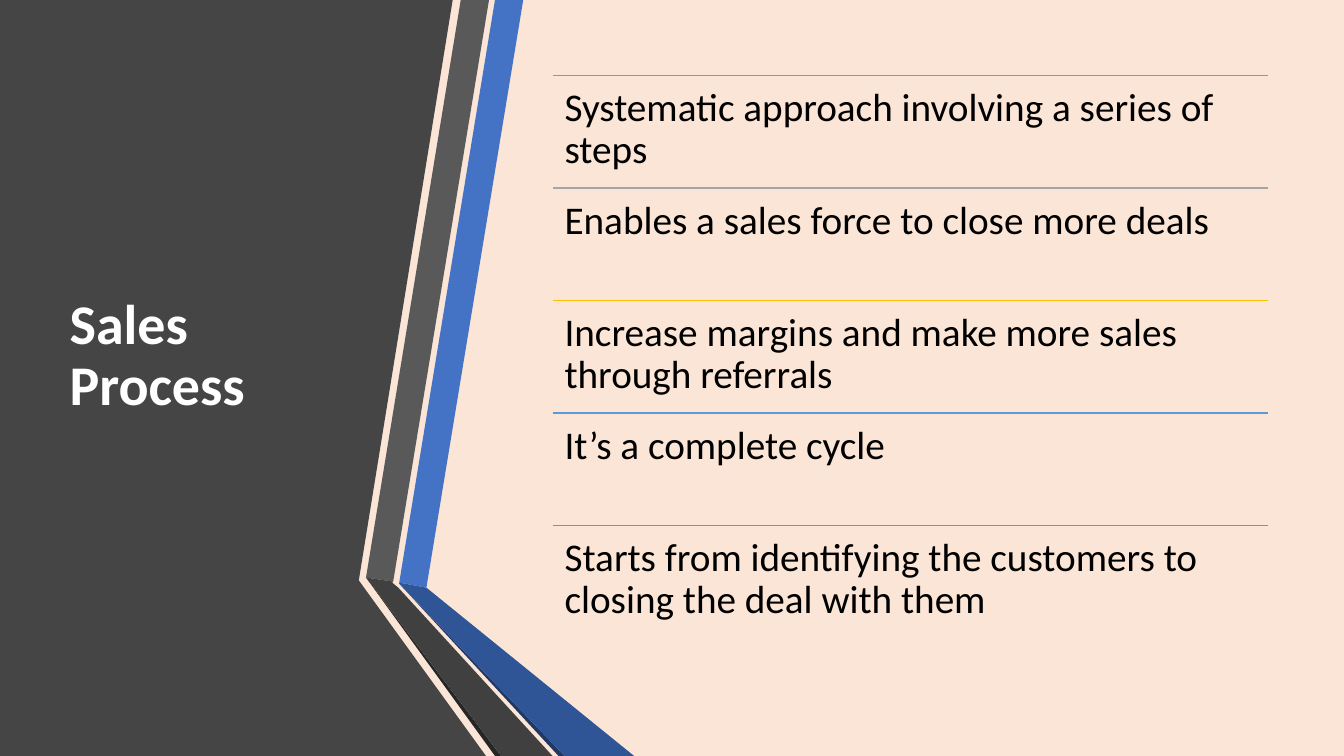
import pptx
import pptx.util
import pptx.dml.color
import pptx.enum.shapes
import pptx.enum.text
import pptx.oxml
import pptx.oxml.ns

# Content
TITLE = "Sales Process"
STEPS = [
    ("Systematic approach involving a series of steps", "orange"),
    ("Enables a sales force to close more deals", "grey"),
    ("Increase margins and make more sales through referrals", "gold"),
    ("It’s a complete cycle", "sky"),
    ("Starts from identifying the customers to closing the deal with them", "green"),
]
COLOURS = {
    "background": "FBE5D6", "panel": "454545", "title": "FFFFFF", "text": "000000",
    "blue": "4472C4", "blue fold": "2F5597", "blue edge": "203864",
    "dark": "595959", "dark fold": "404040", "dark edge": "262626",
    "orange": "ED7D31", "grey": "A5A5A5", "gold": "FFC000", "sky": "5B9BD5", "green": "70AD47",
}

# Layout in inches
WIDTH, HEIGHT = 13.33, 7.5
MARGIN = HEIGHT / 10
ROWS_LEFT, ROWS_WIDTH = 5.48, 7.1
ROW_HEIGHT = (6.33 - MARGIN) / len(STEPS)
ROW_INSET = 0.12
TITLE_BOX = (0.59, MARGIN, 3.04, 5.58)
PANEL = [(0, 0), (4.49, 0), (3.56, 5.75), (3.56, 5.76), (4.82, HEIGHT), (0, HEIGHT)]
RIBBONS = [
    ("blue", [(3.96, 5.78), (4.23, 5.83), (5.19, 0), (4.91, 0)]),
    ("dark", [(4.85, 0), (4.57, 0), (3.63, 5.73), (3.9, 5.77)]),
    ("dark edge", [(3.63, 5.73), (4.91, HEIGHT), (4.97, HEIGHT)]),
    ("blue edge", [(3.96, 5.79), (5.54, HEIGHT), (5.6, HEIGHT)]),
    ("blue fold", [(3.96, 5.79), (5.6, HEIGHT), (6.29, HEIGHT), (4.23, 5.83), (3.96, 5.78)]),
    ("dark fold", [(5.48, HEIGHT), (3.95, 5.83), (3.89, 5.78), (3.9, 5.77),
                   (3.63, 5.73), (4.97, HEIGHT)]),
]
TITLE_FONT = {"name": "Calibri", "size": pptx.util.Pt(40), "bold": True}
STEP_FONT = {"name": "Calibri", "size": pptx.util.Pt(28)}


def inches(*lengths):
    return [pptx.util.Inches(length) for length in lengths]


def colour(name):
    return pptx.dml.color.RGBColor.from_string(COLOURS[name])


def set_all(target, values):
    for name, value in values.items():
        setattr(target, name, value)


def add_outline(shapes, fill, points):
    corners = [inches(*point) for point in points]
    builder = shapes.build_freeform(*corners[0], scale=1.0)
    builder.add_line_segments(corners[1:], close=True)
    outline = builder.convert_to_shape()
    outline.shadow.inherit = False
    outline.fill.solid()
    outline.fill.fore_color.rgb = colour(fill)
    outline.line.fill.background()


def write(frame, text, font, ink, anchor, space_after=None):
    set_all(frame, {"text": text, "word_wrap": True, "vertical_anchor": anchor,
                    "auto_size": pptx.enum.text.MSO_AUTO_SIZE.NONE})
    paragraph = frame.paragraphs[0]
    set_all(paragraph, {"alignment": pptx.enum.text.PP_ALIGN.LEFT,
                        "line_spacing": 0.9, "space_after": space_after})
    set_all(paragraph.runs[0].font, font)
    paragraph.runs[0].font.color.rgb = colour(ink)


def add_rule(shapes, top, ink):
    rule = shapes.add_connector(
        pptx.enum.shapes.MSO_CONNECTOR.STRAIGHT,
        *inches(ROWS_LEFT, top, ROWS_LEFT + ROWS_WIDTH, top))
    rule.line.color.rgb = colour(ink)
    rule.line.width = pptx.util.Pt(1)
    properties = rule._element.spPr
    properties.append(pptx.oxml.parse_xml(
        "<a:effectLst %s/>" % pptx.oxml.ns.nsdecls("a")))


def main():
    deck = pptx.Presentation()
    deck.slide_width, deck.slide_height = inches(WIDTH, HEIGHT)
    slide = deck.slides.add_slide(deck.slide_layouts[5])
    slide.background.fill.solid()
    slide.background.fill.fore_color.rgb = colour("background")

    # Dark panel and folded ribbons
    add_outline(slide.shapes, "panel", PANEL)
    ribbons = slide.shapes.add_group_shape()
    for fill, points in RIBBONS:
        add_outline(ribbons.shapes, fill, points)

    # Title, brought in front of the panel
    title = slide.shapes.title
    set_all(title, dict(zip(("left", "top", "width", "height"), inches(*TITLE_BOX))))
    write(title.text_frame, TITLE, TITLE_FONT, "title", pptx.enum.text.MSO_ANCHOR.MIDDLE)
    slide.shapes._spTree.append(title._element)

    # Ruled rows of steps
    rows = slide.shapes.add_group_shape()
    insets = {"margin_" + side: pptx.util.Inches(ROW_INSET)
              for side in ("left", "top", "right", "bottom")}
    for index, (step, ink) in enumerate(STEPS):
        top = MARGIN + index * ROW_HEIGHT
        add_rule(rows.shapes, top, ink)
        row = rows.shapes.add_textbox(*inches(ROWS_LEFT, top, ROWS_WIDTH, ROW_HEIGHT))
        set_all(row.text_frame, insets)
        write(row.text_frame, step, STEP_FONT, "text", pptx.enum.text.MSO_ANCHOR.TOP,
              pptx.util.Pt(9.8))

    deck.save("out.pptx")


if __name__ == "__main__":
    main()
